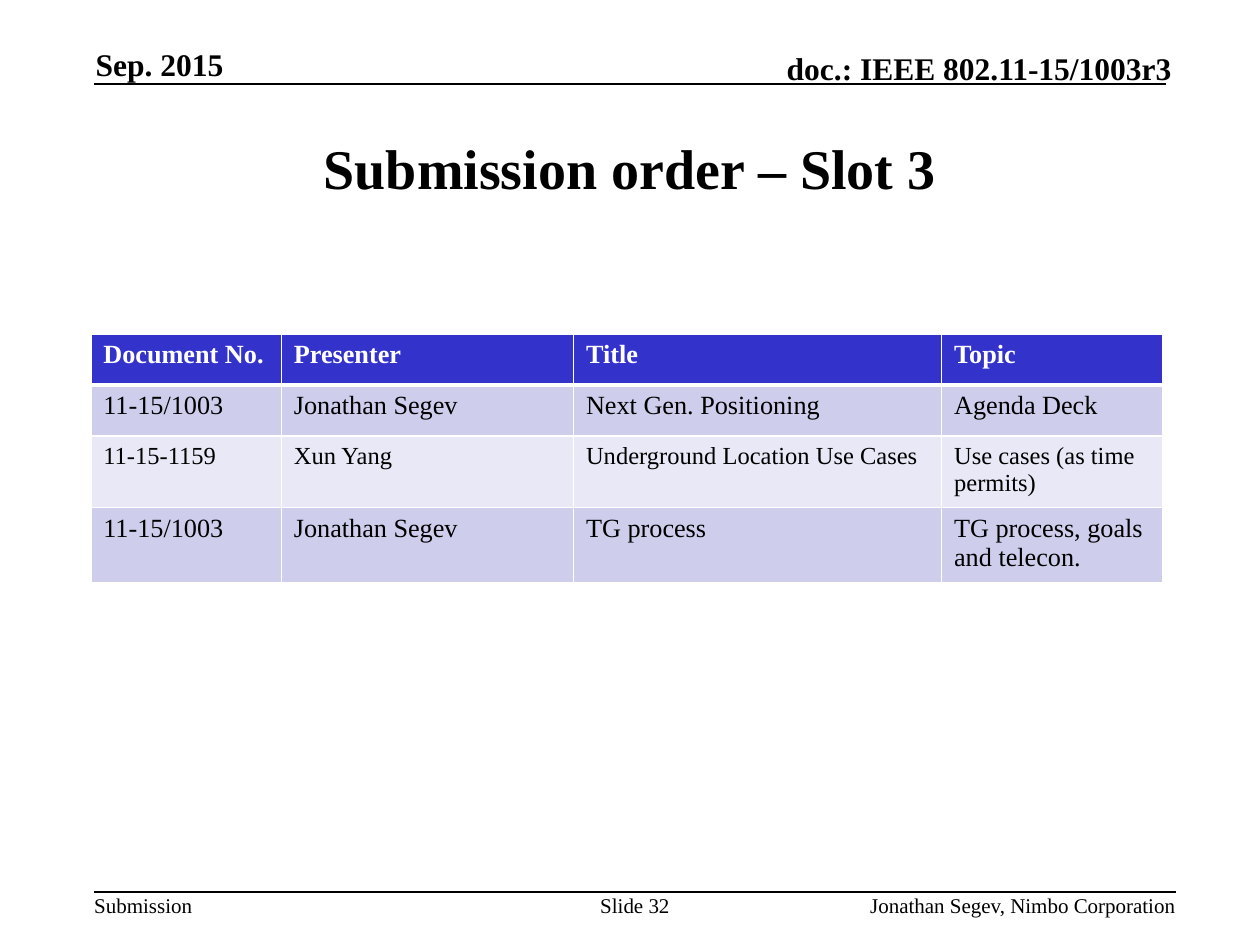
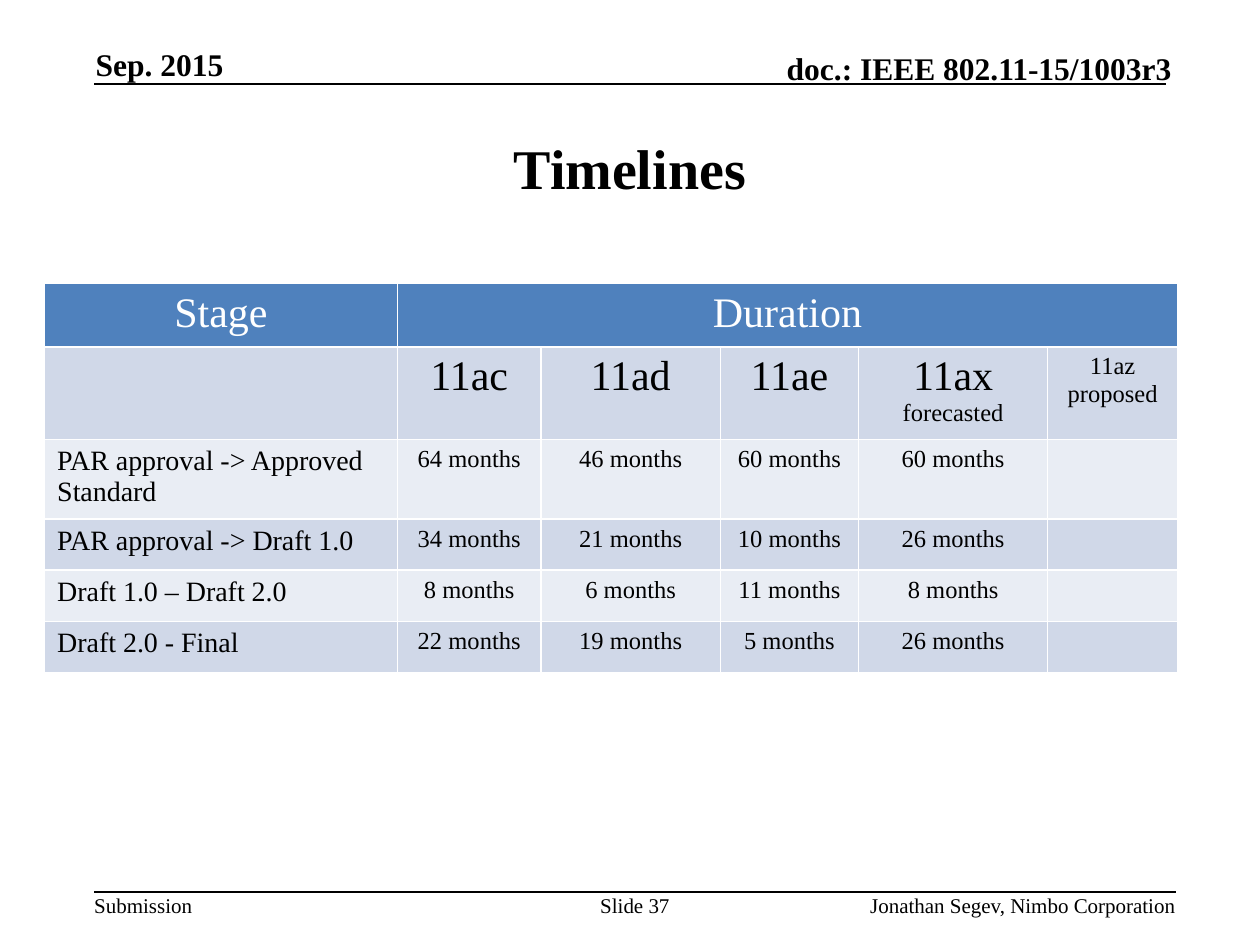
from collections import namedtuple

from lxml import etree
from pptx import Presentation
from pptx.dml.color import RGBColor
from pptx.enum.shapes import MSO_CONNECTOR as Connector
from pptx.enum.text import MSO_ANCHOR as Anchor, PP_ALIGN as Align
from pptx.oxml.ns import qn
from pptx.util import Cm, Pt

FONT = "Times New Roman"
BLACK = RGBColor(0x00, 0x00, 0x00)
WHITE = RGBColor(0xFF, 0xFF, 0xFF)

Box = namedtuple("Box", "left top width height")
Line = namedtuple("Line", "text size bold align", defaults=(False, Align.LEFT))
Palette = namedtuple("Palette", "header odd even")

INDIGO = Palette(RGBColor(0x33, 0x33, 0xCC), RGBColor(0xCE, 0xCE, 0xEC),
                 RGBColor(0xE8, 0xE8, 0xF6))
STEEL = Palette(RGBColor(0x4F, 0x81, 0xBD), RGBColor(0xD0, 0xD8, 0xE8),
                RGBColor(0xE9, 0xED, 0xF4))

TITLE_BOX = Box(1.9, 1.9, 21.6, 2.95)
HEADER_BOX = Box(1.9, 0.91, 21.72, 0.79)
FOOTER_BOX = Box(1.9, 17.99, 21.8, 0.51)


def write_lines(frame, lines, color=BLACK):
    for index, line in enumerate(lines):
        paragraph = frame.paragraphs[0] if index == 0 else frame.add_paragraph()
        paragraph.alignment = line.align
        run = paragraph.add_run()
        run.text = line.text
        run.font.name = FONT
        run.font.size = Pt(line.size)
        run.font.bold = line.bold
        run.font.color.rgb = color


def add_label(slide, box, line, anchor=Anchor.TOP):
    frame = slide.shapes.add_textbox(*map(Cm, box)).text_frame
    frame.word_wrap = True
    frame.vertical_anchor = anchor
    frame.margin_left = frame.margin_right = 0
    frame.margin_top = frame.margin_bottom = 0
    write_lines(frame, [line])


def add_rule(slide, left, top, width):
    rule = slide.shapes.add_connector(
        Connector.STRAIGHT, Cm(left), Cm(top), Cm(left + width), Cm(top))
    rule.line.color.rgb = BLACK
    rule.line.width = Pt(1)
    etree.SubElement(rule._element.spPr, qn("a:effectLst"))


def add_header(slide, box):
    left, top, width, height = box
    add_rule(slide, left, top + 0.79, width - 0.12)
    add_label(slide, Box(left + 0.03, top, 5.2, height - 0.03),
              Line("Sep. 2015", 18, True), Anchor.BOTTOM)
    add_label(slide, Box(left + width - 9.73, top + 0.08, 9.73, height - 0.03),
              Line("doc.: IEEE 802.11-15/1003r3", 18, True, Align.RIGHT),
              Anchor.BOTTOM)


def add_footer(slide, box, number):
    left, top, width, height = box
    add_rule(slide, left, top, width)
    add_label(slide, Box(left, top, 3, height), Line("Submission", 12))
    add_label(slide, Box(left + 9.9, top, 2.0, height),
              Line(f"Slide {number}", 12, align=Align.CENTER))
    add_label(slide, Box(left + width - 8.84, top, 8.84, height),
              Line("Jonathan Segev, Nimbo Corporation", 12, align=Align.RIGHT))


def add_framed_slide(deck, title, number):
    """Add a slide with its title and the shared header and footer."""
    slide = deck.slides.add_slide(deck.slide_layouts[5])
    heading = slide.shapes.title
    heading.left, heading.top, heading.width, heading.height = map(Cm, TITLE_BOX)
    heading.text_frame.vertical_anchor = Anchor.MIDDLE
    write_lines(heading.text_frame, [Line(title, 32, True, Align.CENTER)])
    add_header(slide, HEADER_BOX)
    add_footer(slide, FOOTER_BOX, number)
    return slide


def set_borders(cell, top, bottom):
    """Draw white borders; top and bottom are widths in points."""
    properties = cell._tc.get_or_add_tcPr()
    for side, width in (("L", 1), ("R", 1), ("T", top), ("B", bottom)):
        border = etree.SubElement(properties, qn(f"a:ln{side}"), w=str(Pt(width)))
        fill = etree.SubElement(border, qn("a:solidFill"))
        etree.SubElement(fill, qn("a:srgbClr"), val=str(WHITE))


def add_banded_table(slide, left, top, widths, heights, rows, palette,
                     header_rule=1):
    """Build a table whose rows hold cells, each cell a list of Lines."""
    table = slide.shapes.add_table(
        len(rows), len(widths), Cm(left), Cm(top),
        Cm(sum(widths)), Cm(sum(heights))).table
    for column, width in zip(table.columns, widths):
        column.width = Cm(width)
    for row, height in zip(table.rows, heights):
        row.height = Cm(height)
    for r, row in enumerate(rows):
        for c, lines in enumerate(row):
            cell = table.cell(r, c)
            set_borders(cell, header_rule if r == 1 else 1,
                        header_rule if r == 0 else 1)
            cell.fill.solid()
            if r == 0:
                cell.fill.fore_color.rgb = palette.header
            else:
                cell.fill.fore_color.rgb = palette.odd if r % 2 else palette.even
            write_lines(cell.text_frame, lines, WHITE if r == 0 else BLACK)
    return table


def build_submission_order(deck):
    slide = add_framed_slide(deck, "Submission order – Slot 3", 32)
    submissions = [
        (15, "Document No.", "Presenter", "Title", "Topic"),
        (15, "11-15/1003", "Jonathan Segev", "Next Gen. Positioning",
         "Agenda Deck"),
        (14, "11-15-1159", "Xun Yang", "Underground Location Use Cases",
         "Use cases (as time permits)"),
        (15, "11-15/1003", "Jonathan Segev", "TG process",
         "TG process, goals and telecon."),
    ]
    rows = [[[Line(text, size, r == 0)] for text in texts]
            for r, (size, *texts) in enumerate(submissions)]
    add_banded_table(slide, 1.83, 6.73, [3.84, 5.89, 7.42, 4.45],
                     [1.03, 1.03, 1.35, 1.4], rows, INDIGO, header_rule=3)


def build_timelines(deck):
    slide = add_framed_slide(deck, "Timelines", 37)

    def centred(text, size):
        return Line(text, size, align=Align.CENTER)

    durations = {
        "PAR approval -> Approved Standard": (64, 46, 60, 60),
        "PAR approval -> Draft 1.0": (34, 21, 10, 26),
        "Draft 1.0 – Draft 2.0": (8, 6, 11, 8),
        "Draft 2.0 - Final": (22, 19, 5, 26),
    }
    header = [[centred("Stage", 24)], [centred("Duration", 24)], [], [], [], []]
    groups = [
        [], [centred("11ac", 24)], [centred("11ad", 24)], [centred("11ae", 24)],
        [centred("11ax", 24), centred("forecasted", 14)],
        [centred("11az", 14), centred("proposed", 14)],
    ]
    stages = [
        [[Line(stage, 16)], *([centred(f"{n} months", 14)] for n in months), []]
        for stage, months in durations.items()
    ]
    table = add_banded_table(
        slide, 0.9, 5.72, [7.11, 2.9, 3.61, 2.79, 3.81, 2.62],
        [1.18, 1.73, 1.51, 1.03, 1.03, 1.03], [header, groups, *stages], STEEL)
    table.cell(0, 1).merge(table.cell(0, 5))


def main():
    deck = Presentation()
    deck.slide_width, deck.slide_height = Cm(25.4), Cm(19.05)
    build_submission_order(deck)
    build_timelines(deck)
    deck.save("out.pptx")


if __name__ == "__main__":
    main()
